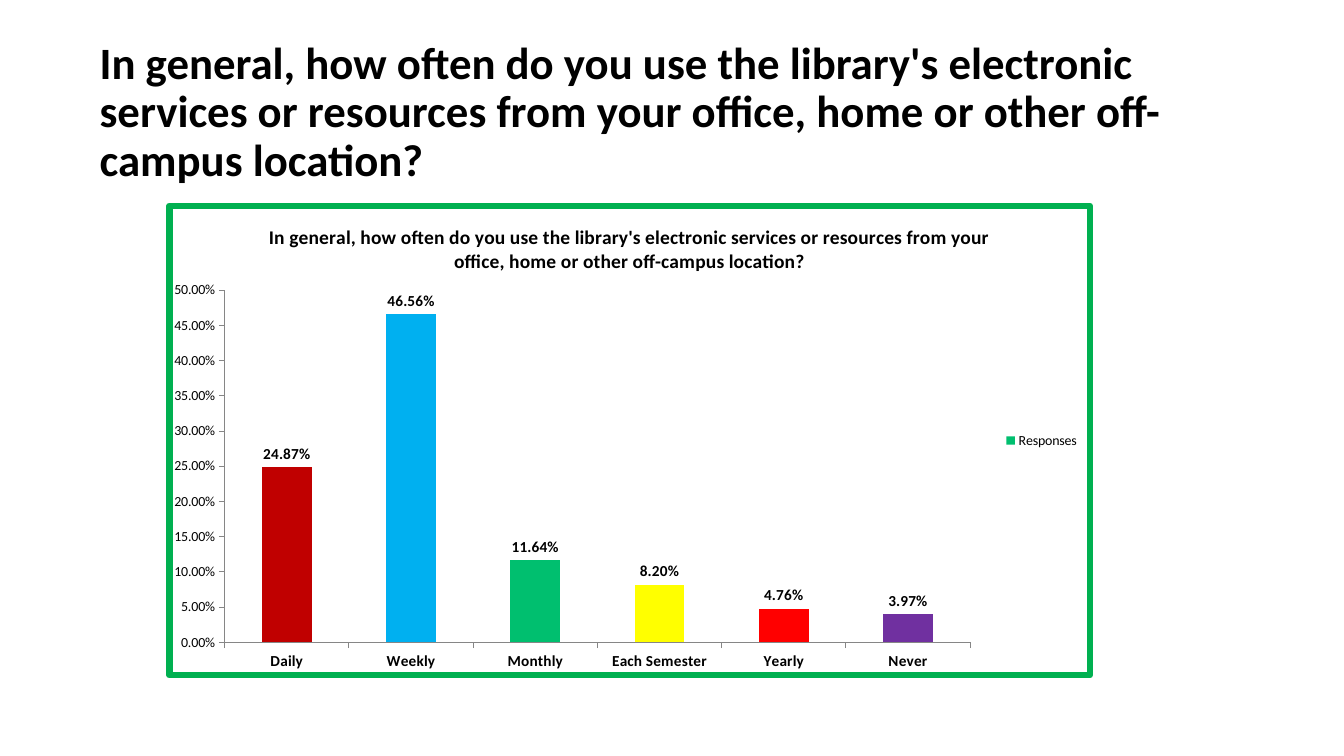
from pptx import Presentation
from pptx.chart.data import CategoryChartData
from pptx.dml.color import RGBColor
from pptx.enum.chart import XL_CHART_TYPE, XL_LABEL_POSITION, XL_LEGEND_POSITION, XL_TICK_MARK
from pptx.enum.text import MSO_ANCHOR
from pptx.oxml import parse_xml
from pptx.oxml.ns import nsdecls, qn
from pptx.util import Inches, Pt

COLUMNS = XL_CHART_TYPE.COLUMN_CLUSTERED
LABEL_ABOVE = XL_LABEL_POSITION.OUTSIDE_END
LEGEND_RIGHT = XL_LEGEND_POSITION.RIGHT
TICK_OUT = XL_TICK_MARK.OUTSIDE
MIDDLE = MSO_ANCHOR.MIDDLE

COLORS = {
    "text": "000000", "axis": "868686", "frame": "00B050", "paper": "FFFFFF",
    "Daily": "C00000", "Weekly": "00B0F0", "Monthly": "00BF6F",
    "Each Semester": "FFFF00", "Yearly": "FF0000", "Never": "7030A0",
}
FONT = "Calibri"
PERCENT = "0.00%"
QUESTION = ("In general, how often do you use the library's electronic services "
            "or resources from your office, home or other off-campus location?")
RESPONSES = {"Daily": 0.2487, "Weekly": 0.4656, "Monthly": 0.1164,
             "Each Semester": 0.082, "Yearly": 0.0476, "Never": 0.0397}
PLOT_AREA = {"x": 0.06, "y": 0.18, "w": 0.81, "h": 0.75}


class SurveySlide:
    def __init__(self, slide):
        self.slide = slide

    def color(self, name):
        return RGBColor.from_string(COLORS[name])

    def style(self, font, size, bold=False):
        font.name = FONT
        font.size = Pt(size)
        font.bold = bold
        font.color.rgb = self.color("text")

    def add_run(self, paragraph, text, size):
        run = paragraph.add_run()
        run.text = text
        self.style(run.font, size, True)

    def add_heading(self, text, left, top, width, height):
        box = self.slide.shapes.add_textbox(
            Inches(left), Inches(top), Inches(width), Inches(height))
        frame = box.text_frame
        frame.word_wrap = True
        frame.vertical_anchor = MIDDLE
        paragraph = frame.paragraphs[0]
        paragraph.line_spacing = 0.9
        self.add_run(paragraph, text, 32)

    def add_column_chart(self, title, series_name, values, left, top, width, height):
        data = CategoryChartData(number_format=PERCENT)
        data.categories = list(values)
        data.add_series(series_name, list(values.values()))
        chart = self.slide.shapes.add_chart(
            COLUMNS, Inches(left), Inches(top), Inches(width), Inches(height), data).chart
        self.style(chart.font, 10)
        chart.has_title = True
        self.add_run(chart.chart_title.text_frame.paragraphs[0], title, 14)
        chart.chart_title.include_in_layout = False
        chart.has_legend = True
        chart.legend.position = LEGEND_RIGHT
        chart.legend.include_in_layout = False
        self.style(chart.legend.font, 10)
        self.style_axis(chart.category_axis, 11, True)
        self.style_axis(chart.value_axis, 10)
        chart.value_axis.minimum_scale = 0
        chart.value_axis.maximum_scale = 0.5
        chart.value_axis.major_unit = 0.05
        chart.value_axis.tick_labels.number_format = PERCENT
        chart.value_axis.tick_labels.number_format_is_linked = False
        self.style_columns(chart.plots[0], values)
        self.place_plot_area(chart)
        self.frame_chart(chart, "frame", 4.5)

    def style_axis(self, axis, size, bold=False):
        axis.has_major_gridlines = False
        axis.major_tick_mark = TICK_OUT
        axis.format.line.color.rgb = self.color("axis")
        axis.format.line.width = Pt(0.75)
        self.style(axis.tick_labels.font, size, bold)

    def style_columns(self, plot, categories):
        plot.vary_by_categories = False
        plot.gap_width = 150
        series = plot.series[0]
        series.invert_if_negative = False
        series.format.fill.solid()
        series.format.fill.fore_color.rgb = self.color("Monthly")
        for index, category in enumerate(categories):
            fill = series.points[index].format.fill
            fill.solid()
            fill.fore_color.rgb = self.color(category)
        labels = series.data_labels
        labels.show_value = True
        labels.position = LABEL_ABOVE
        labels.number_format = PERCENT
        labels.number_format_is_linked = False
        self.style(labels.font, 11, True)

    def place_plot_area(self, chart):
        plot_area = chart.element.find(".//" + qn("c:plotArea"))
        for layout in plot_area.findall(qn("c:layout")):
            plot_area.remove(layout)
        modes = '<c:xMode val="edge"/><c:yMode val="edge"/>'
        sizes = "".join(f'<c:{key} val="{value}"/>' for key, value in PLOT_AREA.items())
        plot_area.insert(0, parse_xml(
            f'<c:layout {nsdecls("c")}><c:manualLayout><c:layoutTarget val="inner"/>'
            f'{modes}{sizes}</c:manualLayout></c:layout>'))

    def frame_chart(self, chart, color, points):
        chart.element.find(qn("c:chart")).addnext(parse_xml(
            f'<c:spPr {nsdecls("c", "a")}>'
            f'<a:solidFill><a:srgbClr val="{COLORS["paper"]}"/></a:solidFill>'
            f'<a:ln w="{Pt(points)}"><a:solidFill><a:srgbClr val="{COLORS[color]}"/>'
            '</a:solidFill><a:round/></a:ln></c:spPr>'))


def main():
    presentation = Presentation()
    presentation.slide_width = Inches(13.33)
    presentation.slide_height = Inches(7.5)
    survey = SurveySlide(presentation.slides.add_slide(presentation.slide_layouts[6]))
    survey.add_heading(QUESTION, 0.89, 0.4, 11.53, 1.45)
    survey.add_column_chart(QUESTION, "Responses", RESPONSES, 1.65, 2.01, 9.19, 4.72)
    presentation.save("out.pptx")


if __name__ == "__main__":
    main()
